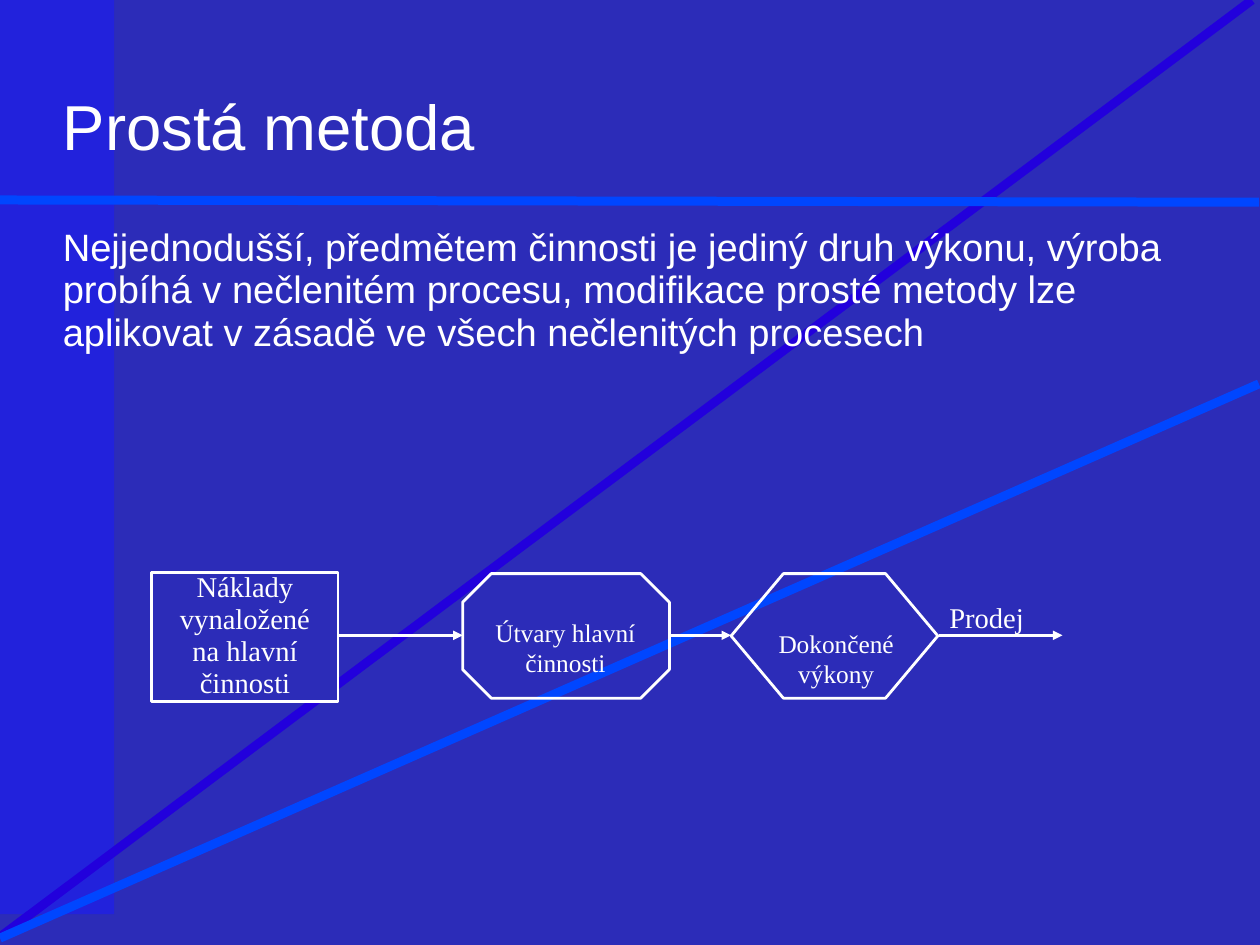
import math
from dataclasses import dataclass
from typing import Optional, Union

import pptx
import pptx.dml.color
import pptx.enum.shapes
import pptx.enum.text
import pptx.oxml
import pptx.oxml.ns
import pptx.util

Inches = pptx.util.Inches
Pt = pptx.util.Pt
MSO_SHAPE = pptx.enum.shapes.MSO_SHAPE
PP_ALIGN = pptx.enum.text.PP_ALIGN

WIDTH, HEIGHT = 11.03, 8.27
WHITE, NAVY, INDIGO = "FFFFFF", "2C2CB8", "2222DC"
VIOLET, AZURE = "2200DC", "0046FF"
SANS, SERIF = "Arial", "Times New Roman"
FLOW_Y = 5.56


@dataclass
class Stroke:
    start: tuple[float, float]
    end: tuple[float, float]
    color: str = WHITE
    weight: float = 1.75
    arrow: bool = False


@dataclass
class Step:
    outline: int
    left: float
    top: float
    width: float
    height: float
    corner: Optional[float] = None
    fill: Optional[str] = None


@dataclass
class Label:
    lines: list[str]
    left: float
    top: float
    width: float
    height: float
    size: float
    font: str = SERIF
    align: int = PP_ALIGN.LEFT
    spacing: Union[float, pptx.util.Length] = 1.0
    inset: float = 0


BACKDROP_STROKES = [
    Stroke((10.96, 0), (0, 8.2), VIOLET, 5.67),
    Stroke((11.02, 1.77), (0, 1.75), AZURE, 5.67),
    Stroke((11.02, 3.36), (0, 8.21), AZURE, 5.67),
]

STEPS = [
    Step(MSO_SHAPE.RECTANGLE, 1.33, 5.01, 1.63, 1.13, fill=NAVY),
    Step(MSO_SHAPE.OCTAGON, 4.05, 5.02, 1.81, 1.09, corner=0.23),
    Step(MSO_SHAPE.HEXAGON, 6.4, 5.02, 1.81, 1.09, corner=0.42),
]

FLOW_ARROWS = [
    Stroke((start, FLOW_Y), (end, FLOW_Y), arrow=True)
    for start, end in [(2.96, 4.05), (5.86, 6.4), (8.22, 9.3)]
]

LABELS = [
    Label(["Prostá metoda"], 0.55, 0.76, 9.95, 0.68, 40, SANS),
    Label(
        [
            "Nejjednodušší, předmětem činnosti je jediný druh výkonu, výroba "
            "probíhá v nečlenitém procesu, modifikace prosté metody lze "
            "aplikovat v zásadě ve všech nečlenitých procesech"
        ],
        0.55, 1.98, 9.7, 1.14, 24, SANS, spacing=Pt(26.8),
    ),
    Label(["Náklady vynaložené na hlavní činnosti"], 1.33, 5.01, 1.63, 1.13, 18,
          align=PP_ALIGN.CENTER, spacing=0.93, inset=0.22),
    Label(["Útvary hlavní", "činnosti"], 4.32, 5.41, 1.26, 0.53, 16,
          align=PP_ALIGN.CENTER, spacing=Pt(18.6)),
    Label(["Dokončené", "výkony"], 6.8, 5.51, 1.04, 0.53, 16,
          align=PP_ALIGN.CENTER, spacing=Pt(18.6)),
    Label(["Prodej"], 8.31, 5.25, 0.72, 0.3, 18),
]


def rgb(value: str) -> pptx.dml.color.RGBColor:
    return pptx.dml.color.RGBColor.from_string(value)


def draw_ellipse_edge(slide) -> None:
    center_x, center_y, radius_x, radius_y = 0.11, 4.14, 0.86, 4.12
    points = [
        (max(0, center_x + radius_x * math.cos(angle)), center_y + radius_y * math.sin(angle))
        for angle in (math.radians(degree) for degree in range(0, 360, 3))
    ]
    builder = slide.shapes.build_freeform(*points[0], scale=Inches(1))
    builder.add_line_segments(points[1:], close=True)
    ellipse = builder.convert_to_shape()
    ellipse.shadow.inherit = False
    ellipse.fill.solid()
    ellipse.fill.fore_color.rgb = rgb(INDIGO)
    ellipse.line.fill.background()


def draw_stroke(slide, stroke: Stroke) -> None:
    connector = slide.shapes.add_connector(
        pptx.enum.shapes.MSO_CONNECTOR.STRAIGHT,
        *(Inches(value) for value in (*stroke.start, *stroke.end)),
    )
    connector.line.color.rgb = rgb(stroke.color)
    connector.line.width = Pt(stroke.weight)
    qn = pptx.oxml.ns.qn
    properties = connector._element.spPr
    properties.append(properties.makeelement(qn("a:effectLst"), {}))
    if stroke.arrow:
        line = connector.line._get_or_add_ln()
        line.append(line.makeelement(qn("a:tailEnd"), {"type": "triangle"}))


def draw_step(slide, step: Step) -> None:
    shape = slide.shapes.add_shape(
        step.outline, Inches(step.left), Inches(step.top), Inches(step.width), Inches(step.height)
    )
    shape.shadow.inherit = False
    if step.corner is not None:
        shape.adjustments[0] = step.corner
    if step.fill:
        shape.fill.solid()
        shape.fill.fore_color.rgb = rgb(step.fill)
    else:
        shape.fill.background()
    shape.line.color.rgb = rgb(WHITE)
    shape.line.width = Pt(1.75)


def draw_label(slide, label: Label) -> None:
    box = slide.shapes.add_textbox(
        Inches(label.left), Inches(label.top), Inches(label.width), Inches(label.height)
    )
    frame = box.text_frame
    frame.word_wrap = True
    frame.margin_top = frame.margin_bottom = 0
    frame.margin_left = frame.margin_right = Inches(label.inset)
    for index, text in enumerate(label.lines):
        paragraph = frame.add_paragraph() if index else frame.paragraphs[0]
        paragraph.alignment = label.align
        paragraph.line_spacing = label.spacing
        run = paragraph.add_run()
        run.text = text
        run.font.name = label.font
        run.font.size = Pt(label.size)
        run.font.color.rgb = rgb(WHITE)


def main() -> None:
    presentation = pptx.Presentation()
    presentation.slide_width = Inches(WIDTH)
    presentation.slide_height = Inches(HEIGHT)
    slide = presentation.slides.add_slide(presentation.slide_layouts[6])
    slide.background.fill.solid()
    slide.background.fill.fore_color.rgb = rgb(NAVY)
    draw_ellipse_edge(slide)
    for stroke in BACKDROP_STROKES:
        draw_stroke(slide, stroke)
    for step in STEPS:
        draw_step(slide, step)
    for arrow in FLOW_ARROWS:
        draw_stroke(slide, arrow)
    for label in LABELS:
        draw_label(slide, label)
    presentation.save("out.pptx")


if __name__ == "__main__":
    main()
